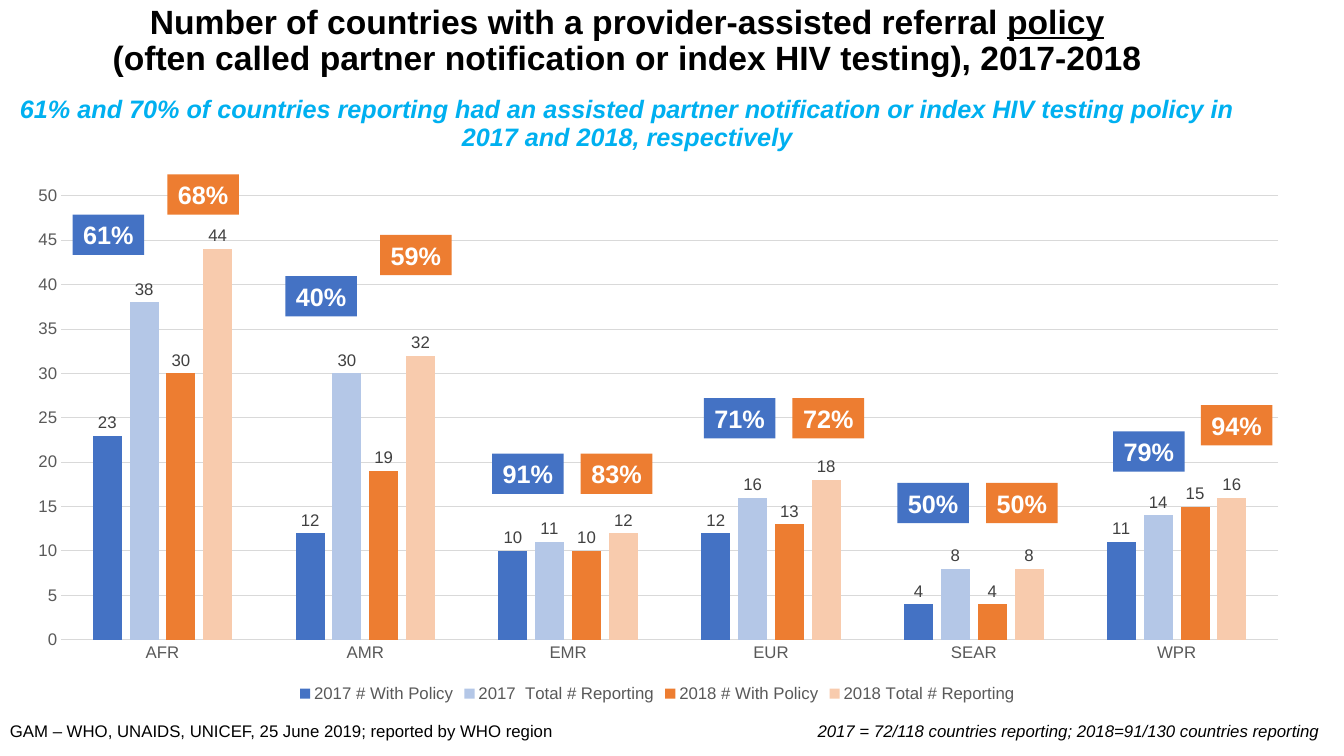
from lxml.etree import SubElement
from pptx import Presentation
from pptx.chart.data import CategoryChartData
from pptx.dml.color import RGBColor
from pptx.enum.chart import XL_CHART_TYPE, XL_LABEL_POSITION, XL_LEGEND_POSITION, XL_TICK_MARK
from pptx.enum.shapes import MSO_SHAPE
from pptx.enum.text import MSO_ANCHOR, MSO_AUTO_SIZE, PP_ALIGN
from pptx.oxml.ns import qn
from pptx.util import Inches, Pt

BLUE, ORANGE, GRID = "4472C4", "ED7D31", "D9D9D9"
REGIONS = ["AFR", "AMR", "EMR", "EUR", "SEAR", "WPR"]
SERIES = [
    ("2017 # With Policy", BLUE, [23, 12, 10, 12, 4, 11]),
    ("2017  Total # Reporting", "B4C7E7", [38, 30, 11, 16, 8, 14]),
    ("2018 # With Policy", ORANGE, [30, 19, 10, 13, 4, 15]),
    ("2018 Total # Reporting", "F8CBAD", [44, 32, 12, 18, 8, 16]),
]
# Per region: (text, left, top) of the 2017 and 2018 badges, offset from the chart corner
BADGES = [
    (("61%", 0.6, 0.37), ("68%", 1.54, -0.03)),
    (("40%", 2.71, 0.98), ("59%", 3.65, 0.57)),
    (("91%", 4.76, 2.74), ("83%", 5.64, 2.74)),
    (("71%", 6.86, 2.19), ("72%", 7.74, 2.19)),
    (("50%", 8.78, 3.03), ("50%", 9.66, 3.03)),
    (("79%", 10.92, 2.52), ("94%", 11.79, 2.26)),
]


def color(value):
    return RGBColor.from_string(value)


def format_font(font, size, value, bold=False, italic=False, underline=False):
    font.name, font.size = "Arial", Pt(size)
    font.bold, font.italic, font.underline = bold, italic, underline
    font.color.rgb = color(value)


def add_text(paragraph, text, size=12, value="000000", **style):
    run = paragraph.add_run()
    run.text = text
    format_font(run.font, size, value, **style)


def add_title(slide, left, top, width, height):
    title = slide.shapes.title
    title.left, title.top, title.width, title.height = map(Inches, (left, top, width, height))
    frame = title.text_frame
    frame.word_wrap, frame.auto_size = True, MSO_AUTO_SIZE.NONE
    frame.vertical_anchor = MSO_ANCHOR.TOP
    heading, summary = frame.paragraphs[0], frame.add_paragraph()
    for paragraph, before in ((heading, 0), (summary, 14)):
        paragraph.alignment = PP_ALIGN.CENTER
        paragraph.line_spacing = 0.9
        paragraph.space_before = Pt(before)
    add_text(heading, "Number of countries with a provider-assisted referral ", 24, bold=True)
    add_text(heading, "policy", 24, bold=True, underline=True)
    heading.add_line_break()
    add_text(heading, "(often called partner notification or index HIV testing), 2017-2018", 24, bold=True)
    add_text(summary, "61% and 70% of countries reporting had an assisted partner notification "
             "or index HIV testing policy in 2017 and 2018, respectively",
             18, "00B0F0", bold=True, italic=True)


def place_plot(chart, **shares):
    """Fix the inner plot area at shares of the chart's size."""
    plot_area = chart._chartSpace.chart.plotArea
    for old in plot_area.findall(qn("c:layout")):
        plot_area.remove(old)
    layout = SubElement(plot_area, qn("c:layout"))
    plot_area.insert(0, layout)
    manual = SubElement(layout, qn("c:manualLayout"))
    settings = {"layoutTarget": "inner", "xMode": "edge", "yMode": "edge", **shares}
    for name, value in settings.items():
        SubElement(manual, qn(f"c:{name}")).set("val", str(value))


def format_axes(chart):
    categories, values = chart.category_axis, chart.value_axis
    for axis in (categories, values):
        axis.major_tick_mark = axis.minor_tick_mark = XL_TICK_MARK.NONE
        format_font(axis.tick_labels.font, 12, "595959")
    values.minimum_scale, values.maximum_scale, values.major_unit = 0, 50, 5
    values.format.line.fill.background()
    values.has_major_gridlines = True
    for line in (categories.format.line, values.major_gridlines.format.line):
        line.color.rgb, line.width = color(GRID), Pt(0.75)


def add_policy_chart(slide, left, top, width, height):
    data = CategoryChartData()
    data.categories = REGIONS
    for name, _, values in SERIES:
        data.add_series(name, values)
    chart = slide.shapes.add_chart(XL_CHART_TYPE.COLUMN_CLUSTERED,
                                   *map(Inches, (left, top, width, height)), data).chart
    chart.has_title = False
    format_font(chart.font, 12, "595959")
    format_axes(chart)
    place_plot(chart, x=0.038, y=0.035, w=0.943, h=0.839)

    # Bars and their values
    plot = chart.plots[0]
    plot.gap_width, plot.overlap, plot.vary_by_categories = 219, -27, False
    for series, (_, fill, _) in zip(plot.series, SERIES):
        series.format.fill.solid()
        series.format.fill.fore_color.rgb = color(fill)
        labels = series.data_labels
        labels.show_value, labels.position = True, XL_LABEL_POSITION.OUTSIDE_END
        format_font(labels.font, 12, "404040")

    chart.has_legend = True
    chart.legend.position = XL_LEGEND_POSITION.BOTTOM
    chart.legend.include_in_layout = False
    format_font(chart.legend.font, 12, "595959")


def add_badge(slide, text, fill, left, top, width=0.71, height=0.4):
    badge = slide.shapes.add_shape(MSO_SHAPE.RECTANGLE, *map(Inches, (left, top, width, height)))
    badge.shadow.inherit = False
    badge.fill.solid()
    badge.fill.fore_color.rgb = color(fill)
    badge.line.fill.background()
    frame = badge.text_frame
    frame.word_wrap = False
    frame.vertical_anchor = MSO_ANCHOR.MIDDLE
    frame.paragraphs[0].alignment = PP_ALIGN.CENTER
    add_text(frame.paragraphs[0], text, 18, "FFFFFF", bold=True)


def add_badges(slide, left, top):
    for pair in BADGES:
        for (text, across, down), fill in zip(pair, (BLUE, ORANGE)):
            add_badge(slide, text, fill, left + across, top + down)


def add_note(slide, text, left, top, width, height, **style):
    frame = slide.shapes.add_textbox(*map(Inches, (left, top, width, height))).text_frame
    frame.word_wrap, frame.auto_size = False, MSO_AUTO_SIZE.SHAPE_TO_FIT_TEXT
    add_text(frame.paragraphs[0], text, **style)


def main():
    presentation = Presentation()
    presentation.slide_width, presentation.slide_height = Inches(13.33), Inches(7.5)
    slide = presentation.slides.add_slide(presentation.slide_layouts[5])
    add_title(slide, 0.05, 0, 12.34, 1.64)
    add_policy_chart(slide, 0.12, 1.76, 12.8, 5.25)
    # Source and totals
    add_note(slide, "GAM – WHO, UNAIDS, UNICEF, 25 June 2019; reported by WHO region",
             0, 7.1, 5.69, 0.3)
    add_note(slide, "2017 = 72/118 countries reporting; 2018=91/130 countries reporting",
             8.01, 7.1, 5.31, 0.3, italic=True)
    add_badges(slide, 0.12, 1.76)
    presentation.save("out.pptx")


if __name__ == "__main__":
    main()
